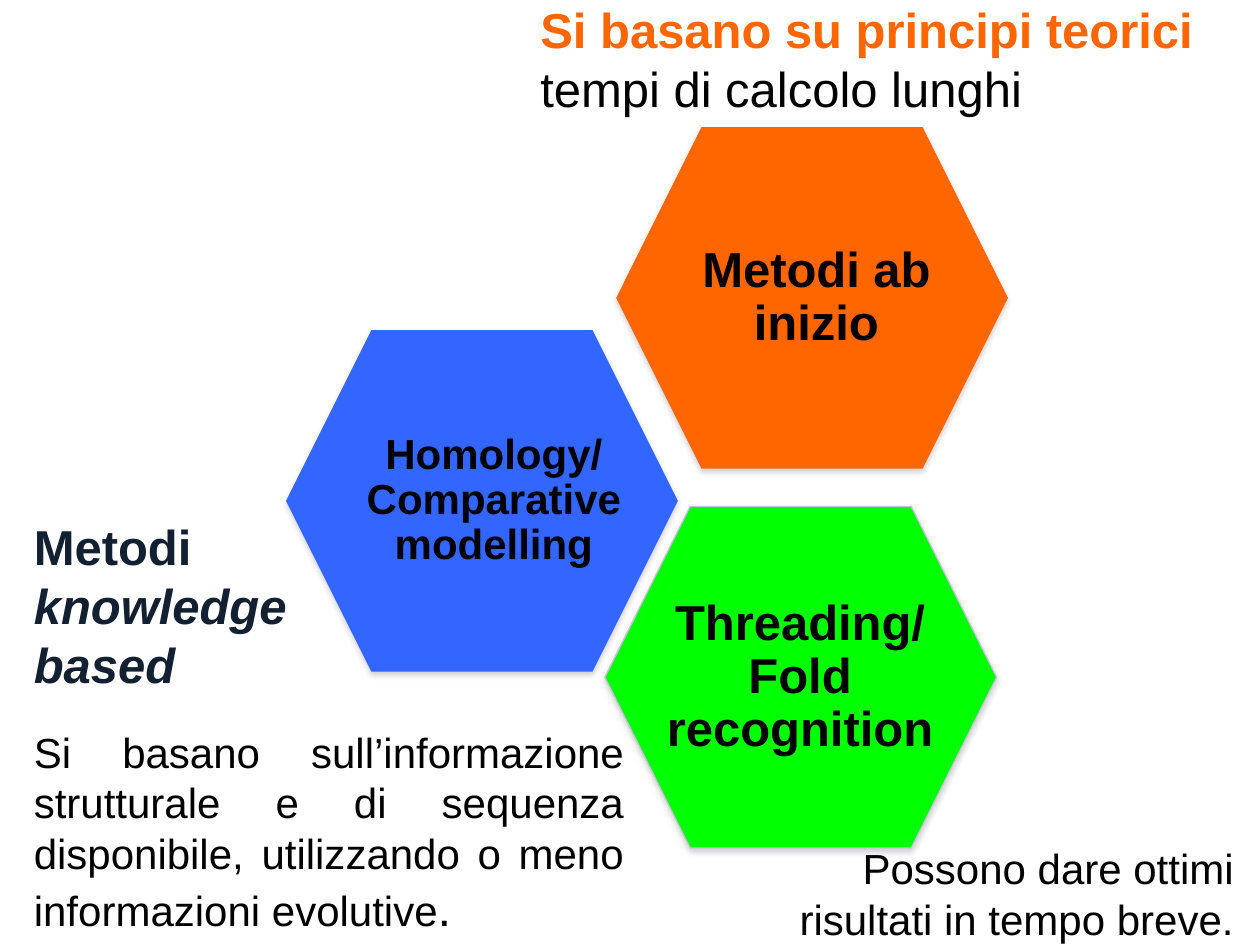
from lxml.etree import SubElement
from pptx import Presentation
from pptx.dml.color import RGBColor
from pptx.enum.shapes import MSO_SHAPE
from pptx.enum.text import MSO_ANCHOR, PP_ALIGN
from pptx.oxml.ns import qn
from pptx.util import Inches, Pt

COLORS = {
    "orange": "FF6600",
    "blue": "3366FF",
    "green": "00FF00",
    "navy": "122031",
    "black": "000000",
    "outline": "C5C4D9",
    "shadow": "808080",
}
HEX_SIZE = (3.11, 2.71)
LABEL_SIZE = (2.14, 1.87)
LABEL_DROP = 0.42


def color(name):
    return RGBColor.from_string(COLORS[name])


def add_soft_shadow(shape):
    """Give the shape a blurred shadow that falls straight down."""
    effects = SubElement(shape._element.spPr, qn("a:effectLst"))
    shadow = SubElement(effects, qn("a:outerShdw"), blurRad=str(Pt(3.1)),
                        dist=str(Pt(1.8)), dir="5400000", rotWithShape="0")
    tint = SubElement(shadow, qn("a:srgbClr"), val=COLORS["shadow"])
    SubElement(tint, qn("a:alpha"), val="35000")


def add_text(slide, left, top, width, height):
    box = slide.shapes.add_textbox(*map(Inches, (left, top, width, height)))
    box.text_frame.word_wrap = True
    return box.text_frame


def style(font, size, tone="black", bold=False, italic=False):
    font.name = "Arial"
    font.size = Pt(size)
    font.color.rgb = color(tone)
    font.bold = bold
    font.italic = italic


def write_lines(frame, lines, align):
    """Fill the frame with one paragraph per (text, font settings) pair."""
    frame.text = "\n".join(text for text, _ in lines)
    for paragraph, (_, settings) in zip(frame.paragraphs, lines):
        paragraph.alignment = align
        style(paragraph.runs[0].font, *settings)


def add_method(slide, label, left, top, label_left, size, fill, outlined=False):
    """Draw a hexagon with its label in a narrower box over it."""
    hexagon = slide.shapes.add_shape(
        MSO_SHAPE.HEXAGON, *map(Inches, (left, top, *HEX_SIZE)))
    hexagon.adjustments[0] = 0.25
    hexagon.adjustments[1] = 1.155
    hexagon.fill.solid()
    hexagon.fill.fore_color.rgb = color(fill)
    if outlined:
        hexagon.line.color.rgb = color("outline")
        hexagon.line.width = Pt(0.75)
    else:
        hexagon.line.fill.background()
    add_soft_shadow(hexagon)

    frame = add_text(slide, label_left, top + LABEL_DROP, *LABEL_SIZE)
    frame.margin_left = frame.margin_right = 0
    frame.margin_top = frame.margin_bottom = Inches(0.04)
    frame.vertical_anchor = MSO_ANCHOR.MIDDLE
    write_lines(frame, [(label, (size, "black", True))], PP_ALIGN.CENTER)
    frame.paragraphs[0].line_spacing = 0.9


def add_knowledge_note(slide):
    frame = add_text(slide, 0.17, 4.05, 4.88, 3.47)
    write_lines(frame, [
        ("Metodi ", (28, "navy", True)),
        ("knowledge ", (28, "navy", True, True)),
        ("based ", (28, "navy", True, True)),
        ("Si basano sull’informazione strutturale e di sequenza disponibile, "
         "utilizzando o meno informazioni evolutive", (24,)),
    ], PP_ALIGN.JUSTIFY)
    description = frame.paragraphs[-1]
    description.space_before = Pt(19)
    full_stop = description.add_run()
    full_stop.text = "."
    style(full_stop.font, 28)


def main():
    prs = Presentation()
    prs.slide_width, prs.slide_height = Inches(10), Inches(7.5)
    slide = prs.slides.add_slide(prs.slide_layouts[6])

    write_lines(add_text(slide, 4.19, -0.05, 5.81, 1.51), [
        ("Si basano su principi teorici", (28, "orange", True)),
        ("tempi di calcolo lunghi", (28,)),
    ], PP_ALIGN.JUSTIFY)
    add_knowledge_note(slide)

    add_method(slide, "Threading/Fold recognition", 4.8, 4.02, 5.28, 28,
               "green", outlined=True)
    add_method(slide, "Homology/Comparative modelling", 2.27, 2.62, 2.85, 24,
               "blue")
    add_method(slide, "Metodi ab inizio", 4.89, 1.01, 5.41, 28, "orange")

    write_lines(add_text(slide, 6.15, 6.64, 3.74, 0.91), [
        ("Possono dare ottimi risultati in tempo breve.", (24,)),
    ], PP_ALIGN.RIGHT)

    prs.save("out.pptx")


if __name__ == "__main__":
    main()
